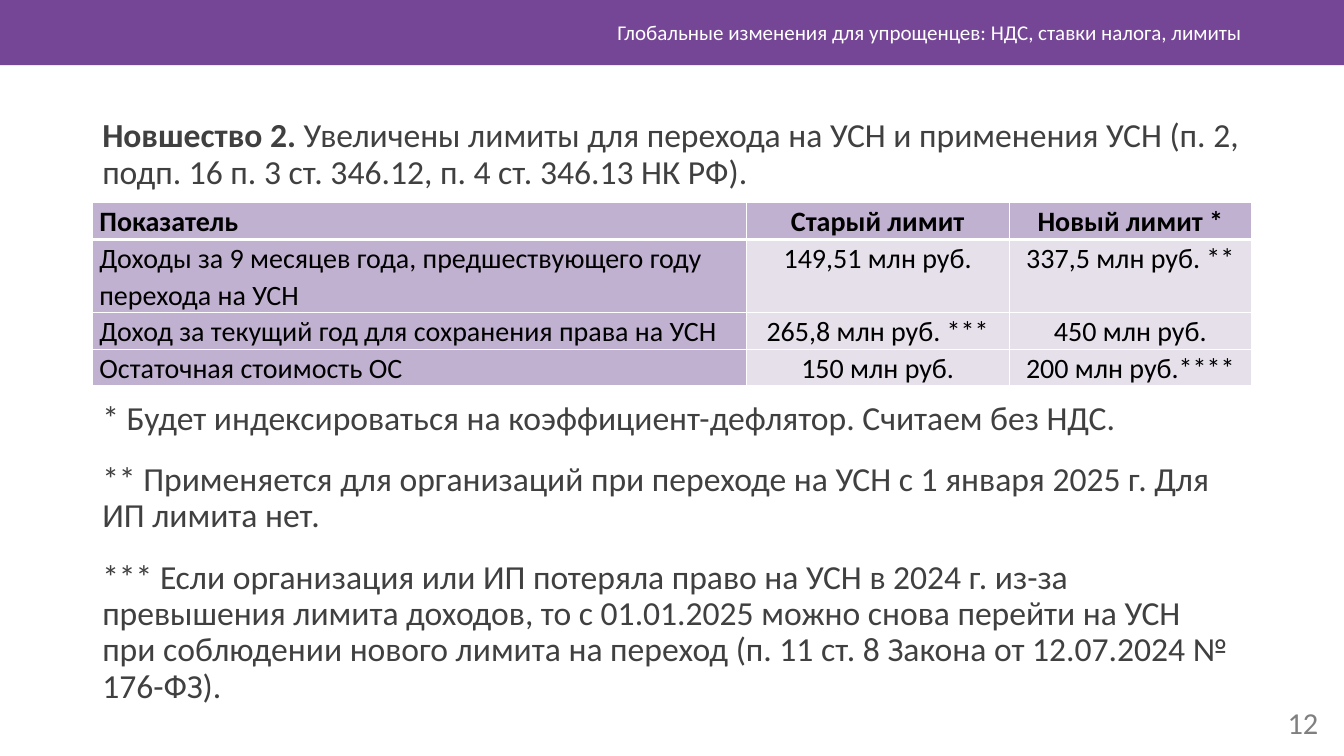
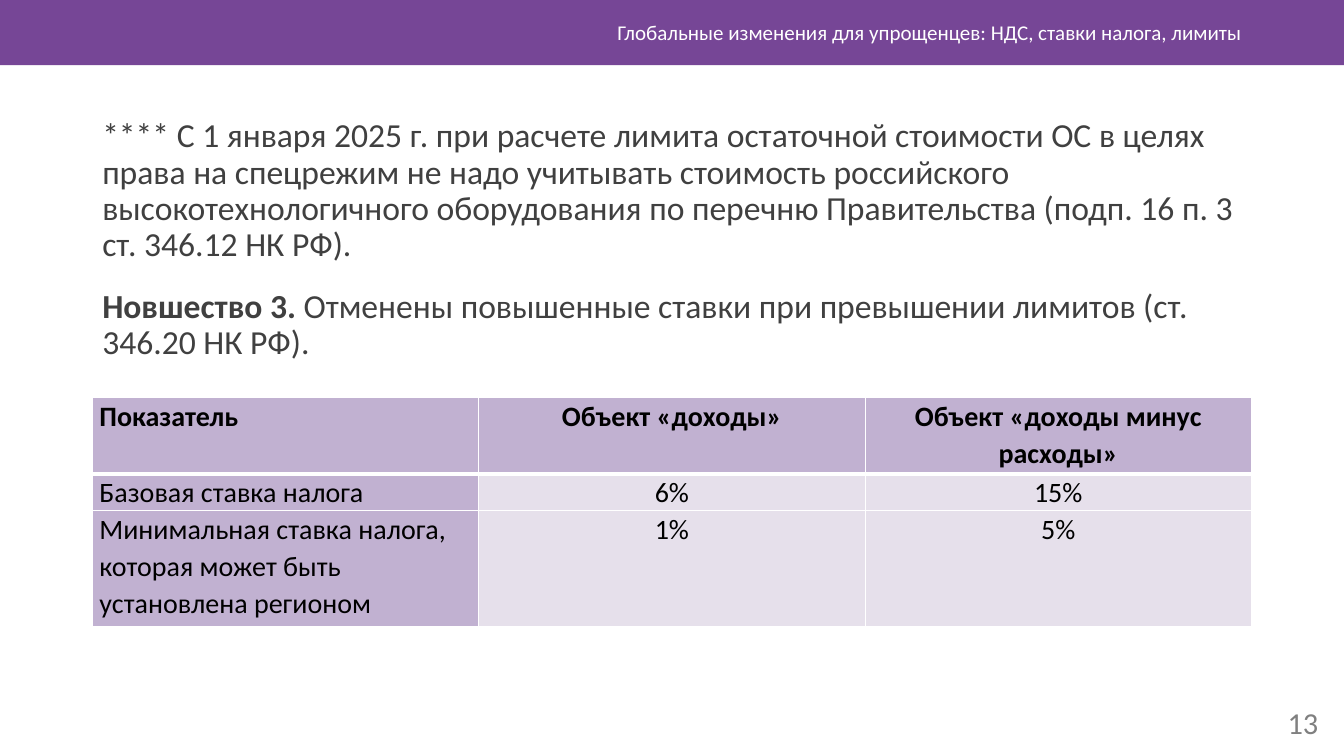
"""Build two slides on the new limits and rates of the simplified tax system."""
from lxml import etree
from pptx import Presentation
from pptx.dml.color import RGBColor
from pptx.enum.shapes import MSO_SHAPE
from pptx.enum.text import MSO_ANCHOR, PP_ALIGN
from pptx.oxml.ns import qn
from pptx.util import Pt

RECTANGLE = MSO_SHAPE.RECTANGLE
TOP, MIDDLE = MSO_ANCHOR.TOP, MSO_ANCHOR.MIDDLE
LEFT, CENTER, RIGHT = PP_ALIGN.LEFT, PP_ALIGN.CENTER, PP_ALIGN.RIGHT

PURPLE = RGBColor(0x76, 0x46, 0x96)
LILAC = RGBColor(0xC1, 0xB1, 0xD1)
PALE_LILAC = RGBColor(0xE6, 0xE0, 0xEB)
WHITE = RGBColor(0xFF, 0xFF, 0xFF)
BLACK = RGBColor(0, 0, 0)
DARK_GRAY = RGBColor(0x40, 0x40, 0x40)
GRAY = RGBColor(0x80, 0x80, 0x80)

FONT = "Calibri"
PAGE_WIDTH, PAGE_HEIGHT = 960, 540
BAND_HEIGHT = 46.6
MARGIN = 66
CONTENT_WIDTH = PAGE_WIDTH - 2 * MARGIN
BODY_TOP = 81.4
TITLE = "Глобальные изменения для упрощенцев: НДС, ставки налога, лимиты"

LIMITS = [
    ["Показатель", "Старый лимит", "Новый лимит *"],
    ["Доходы за 9 месяцев года, предшествующего году перехода на УСН",
     "149,51 млн руб.", "337,5 млн руб. **"],
    ["Доход за текущий год для сохранения права на УСН",
     "265,8 млн руб. ***", "450 млн руб."],
    ["Остаточная стоимость ОС", "150 млн руб.", "200 млн руб.****"],
]
RATES = [
    ["Показатель", "Объект «доходы»", "Объект «доходы минус расходы»"],
    ["Базовая ставка налога", "6%", "15%"],
    ["Минимальная ставка налога, которая может быть установлена регионом", "1%", "5%"],
]
LIMITS_INTRO = [
    ("Новшество 2. ",
     "Увеличены лимиты для перехода на УСН и применения УСН "
     "(п. 2, подп. 16 п. 3 ст. 346.12, п. 4 ст. 346.13 НК РФ)."),
]
LIMITS_NOTES = [
    ("", "* Будет индексироваться на коэффициент-дефлятор. Считаем без НДС."),
    ("", "** Применяется для организаций при переходе на УСН с 1 января 2025 г. "
         "Для ИП лимита нет."),
    ("", "*** Если организация или ИП потеряла право на УСН в 2024 г. из-за превышения "
         "лимита доходов, то с 01.01.2025 можно снова перейти на УСН при соблюдении нового "
         "лимита на переход (п. 11 ст. 8 Закона от 12.07.2024 № 176-ФЗ)."),
]
RATES_INTRO = [
    ("", "**** С 1 января 2025 г. при расчете лимита остаточной стоимости ОС в целях права "
         "на спецрежим не надо учитывать стоимость российского высокотехнологичного "
         "оборудования по перечню Правительства (подп. 16 п. 3 ст. 346.12 НК РФ)."),
    ("Новшество 3. ",
     "Отменены повышенные ставки при превышении лимитов (ст. 346.20 НК РФ)."),
]


def style_font(font, size, color, bold=False):
    font.name = FONT
    font.size = Pt(size)
    font.color.rgb = color
    font.bold = bold


def add_box(page, left, top, width, height, anchor=TOP):
    box = page.shapes.add_textbox(Pt(left), Pt(top), Pt(width), Pt(height))
    box.text_frame.word_wrap = True
    box.text_frame.vertical_anchor = anchor
    return box.text_frame


def add_label(page, text, left, top, width, height, size, color):
    frame = add_box(page, left, top, width, height, MIDDLE)
    frame.text = text
    para = frame.paragraphs[0]
    para.alignment = RIGHT
    style_font(para.runs[0].font, size, color)


def add_body(page, top, height, items):
    frame = add_box(page, MARGIN, top, CONTENT_WIDTH, height)
    for index, (lead, text) in enumerate(items):
        para = frame.add_paragraph() if index else frame.paragraphs[0]
        para.line_spacing = 0.9
        para.space_before = Pt(10 if index else 0)
        para.space_after = Pt(8)
        for words, bold in ((lead, True), (text, False)):
            if words:
                span = para.add_run()
                span.text = words
                style_font(span.font, 24, DARK_GRAY, bold)


def set_borders(cell, top, bottom):
    properties = cell._tc.get_or_add_tcPr()
    for side, width in (("L", 1), ("R", 1), ("T", top), ("B", bottom)):
        line = etree.SubElement(properties, qn(f"a:ln{side}"), w=str(Pt(width)))
        fill = etree.SubElement(line, qn("a:solidFill"))
        etree.SubElement(fill, qn("a:srgbClr"), val=str(WHITE))


def fill_cell(cell, text, row, column):
    cell.margin_left = cell.margin_right = Pt(5)
    cell.margin_top = cell.margin_bottom = 0
    set_borders(cell, 3 if row == 1 else 1, 3 if row == 0 else 1)
    cell.fill.solid()
    cell.fill.fore_color.rgb = PALE_LILAC if row and column else LILAC
    cell.text = text
    para = cell.text_frame.paragraphs[0]
    para.alignment = CENTER if column else LEFT
    para.line_spacing = 1.07
    style_font(para.runs[0].font, 20, BLACK, row == 0)


def add_grid(page, top, widths, heights, rows):
    frame = page.shapes.add_table(len(rows), len(widths), Pt(MARGIN), Pt(top),
                                  Pt(sum(widths)), Pt(sum(heights)))
    table = frame.table
    table.horz_banding = False
    for column, width in zip(table.columns, widths):
        column.width = Pt(width)
    for row, height in zip(table.rows, heights):
        row.height = Pt(height)
    for row, texts in enumerate(rows):
        for column, text in enumerate(texts):
            fill_cell(table.cell(row, column), text, row, column)


def add_page(deck, number):
    page = deck.slides.add_slide(deck.slide_layouts[6])
    band = page.shapes.add_shape(RECTANGLE, 0, 0, Pt(PAGE_WIDTH), Pt(BAND_HEIGHT))
    band.shadow.inherit = False
    band.fill.solid()
    band.fill.fore_color.rgb = PURPLE
    band.line.fill.background()
    add_label(page, str(number), 900.8, 501.8, 48, 28.8, 21.7, GRAY)
    add_label(page, TITLE, 255, 8.8, 639, 28.8, 15, WHITE)
    return page


def main():
    deck = Presentation()
    deck.slide_width, deck.slide_height = Pt(PAGE_WIDTH), Pt(PAGE_HEIGHT)

    limits = add_page(deck, 12)
    add_body(limits, BODY_TOP, 60, LIMITS_INTRO)
    add_grid(limits, 144.8, [467, 188, 173], [26.2, 52.4, 26.2, 26.2], LIMITS)
    add_body(limits, 283, 220, LIMITS_NOTES)

    rates = add_page(deck, 13)
    add_body(rates, BODY_TOP, 190, RATES_INTRO)
    add_grid(rates, 283.8, [CONTENT_WIDTH / 3] * 3, [54.6, 26.4, 82.6], RATES)

    deck.save("out.pptx")


if __name__ == "__main__":
    main()
